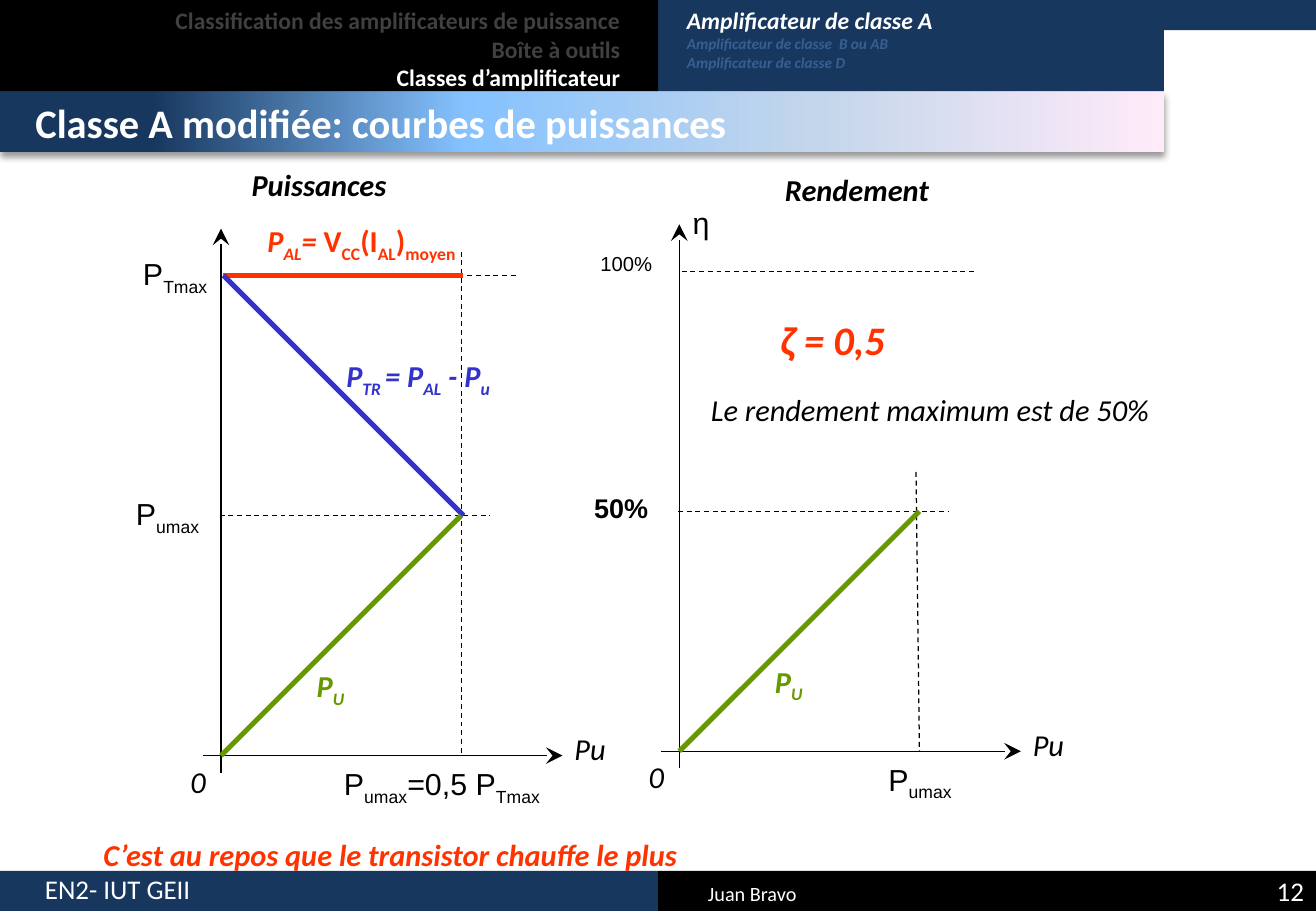
from lxml.etree import SubElement
from pptx import Presentation
from pptx.dml.color import RGBColor
from pptx.enum.dml import MSO_LINE
from pptx.enum.shapes import MSO_CONNECTOR, MSO_SHAPE
from pptx.enum.text import MSO_ANCHOR, PP_ALIGN
from pptx.oxml.ns import qn
from pptx.util import Cm, Pt

WIDTH, HEIGHT = 27.51, 19.05
HALF = 13.76  # where the black and navy bands meet
BAND = 24.33  # right end of the header bands
LEVEL = 5.02  # half of full scale on both plots

COLORS = {
    "navy": "17375E", "black": "000000", "white": "FFFFFF", "faded": "404040",
    "blue": "376092", "sky": "85C2FF", "mist": "C4D6EB", "pink": "FFEBFA",
    "red": "FF3300", "green": "669900", "violet": "3333CC",
}
ITALIC = {"name": "Calibri", "size": Pt(18), "italic": True}
BOLD = {**ITALIC, "bold": True}
ARIAL = {"name": "Arial", "size": Pt(18)}
FOOTER = {"name": "Calibri", "size": Pt(16)}
HEADER = {"name": "Calibri", "size": Pt(14), "bold": True}


def color(name):
    return RGBColor.from_string(COLORS[name])


def write(paragraph, text, tint, style, upright_from=99):
    """Add text in which every second piece between bars is a subscript."""
    for index, piece in enumerate(text.split("|")):
        if not piece:
            continue
        run = paragraph.add_run()
        run.text = piece
        for key, value in style.items():
            setattr(run.font, key, value)
        run.font.color.rgb = color(tint)
        if index >= upright_from:
            run.font.italic = False
        if index % 2:
            run._r.get_or_add_rPr().set("baseline", "-25000")


def set_frame(frame, margins, anchor=MSO_ANCHOR.TOP):
    sides = ("margin_left", "margin_top", "margin_right", "margin_bottom")
    for side, margin in zip(sides, margins):
        setattr(frame, side, Cm(margin))
    frame.word_wrap = True
    frame.vertical_anchor = anchor


def add_label(slide, x, y, width, text, tint, style, upright_from=99):
    frame = slide.shapes.add_textbox(Cm(x), Cm(y), Cm(width), Cm(0.76)).text_frame
    set_frame(frame, (0, 0, 0, 0))
    write(frame.paragraphs[0], text, tint, style, upright_from)


def add_band(slide, x, y, width, height, tint):
    band = slide.shapes.add_shape(
        MSO_SHAPE.RECTANGLE, Cm(x), Cm(y), Cm(width), Cm(height))
    band.shadow.inherit = False
    band.line.fill.background()
    band.fill.solid()
    band.fill.fore_color.rgb = color(tint)
    return band


def add_line(slide, start, end, tint="black", width=0.75, dash=False, arrow=False):
    line = slide.shapes.add_connector(
        MSO_CONNECTOR.STRAIGHT, *(Cm(value) for value in (*start, *end)))
    line.line.color.rgb = color(tint)
    line.line.width = Pt(width)
    properties = line._element.spPr
    if dash:
        line.line.dash_style = MSO_LINE.DASH
    if arrow:
        SubElement(properties.find(qn("a:ln")), qn("a:tailEnd"),
                   type="stealth", w="lg", len="lg")
    SubElement(properties, qn("a:effectLst"))


def add_footer(slide, top, height):
    add_band(slide, WIDTH / 2, top, WIDTH / 2, height, "black")
    add_band(slide, 0, top, WIDTH / 2, height, "navy")
    entries = [
        (0.69, -0.1, 6.65, "EN2- IUT GEII", 16, PP_ALIGN.LEFT),
        (14.55, 0.08, 5.28, "Juan Bravo", 12, PP_ALIGN.LEFT),
        (25.91, 0, 1.6, "12", 16, PP_ALIGN.RIGHT),
    ]
    for x, dy, width, text, size, align in entries:
        frame = slide.shapes.add_textbox(
            Cm(x), Cm(top + dy), Cm(width), Cm(height)).text_frame
        anchor = MSO_ANCHOR.MIDDLE if align == PP_ALIGN.RIGHT else MSO_ANCHOR.TOP
        set_frame(frame, (0.25, 0.13, 0.25, 0.13), anchor)
        frame.paragraphs[0].alignment = align
        write(frame.paragraphs[0], text, "white", {**FOOTER, "size": Pt(size)})


def add_outline(band, margins, align, entries):
    """Write one paragraph per entry of text, tint and style."""
    frame = band.text_frame
    set_frame(frame, margins)
    for index, entry in enumerate(entries):
        paragraph = frame.add_paragraph() if index else frame.paragraphs[0]
        paragraph.alignment = align
        write(paragraph, *entry)


def add_header(slide, height, title_height):
    add_band(slide, 23.93, 0, WIDTH - 23.93, 0.63, "navy")

    # Title bar: gradient and soft shadow
    title = add_band(slide, 0, height, BAND, title_height, "navy")
    title.fill.gradient()
    title.fill.gradient_angle = 0
    properties = title._element.spPr
    stops = properties.find(".//" + qn("a:gsLst"))
    stops.clear()
    for position, tint in ((13, "navy"), (40, "sky"), (70, "mist"), (100, "pink")):
        stop = SubElement(stops, qn("a:gs"), pos=str(position * 1000))
        SubElement(stop, qn("a:srgbClr"), val=COLORS[tint])
    shadow = SubElement(properties.find(qn("a:effectLst")), qn("a:outerShdw"),
                        blurRad=str(Pt(4)), dist=str(Pt(3)), dir="5400000",
                        rotWithShape="0")
    shade = SubElement(shadow, qn("a:srgbClr"), val=COLORS["black"])
    SubElement(shade, qn("a:alpha"), val="40000")
    add_outline(title, (0.74, 0.13, 0.25, 0.13), PP_ALIGN.LEFT, [
        ("Classe A modifiée: courbes de puissances", "white",
         {**HEADER, "size": Pt(24)})])

    # Subsections
    topic = {**HEADER, "italic": True}
    minor = {**topic, "size": Pt(9)}
    subsections = add_band(slide, HALF, 0, BAND - HALF, height, "navy")
    add_outline(subsections, (0.6, 0.13, 0.25, 0.13), PP_ALIGN.LEFT, [
        ("Amplificateur de classe A", "white", topic),
        ("Amplificateur de classe  B ou AB", "blue", minor),
        ("Amplificateur de classe D", "blue", minor)])

    # Sections
    sections = add_band(slide, 0, 0, HALF, height, "black")
    add_outline(sections, (0.25, 0.13, 0.79, 0.13), PP_ALIGN.RIGHT, [
        ("Classification des amplificateurs de puissance", "faded", HEADER),
        ("Boîte à outils", "faded", HEADER),
        ("Classes d’amplificateur", "white", HEADER)])


def add_plot(slide, x, y, guide, curves, labels):
    """Draw a plot whose axes cross at x, y; parts are offsets from there."""
    dashed = {"dash": True}
    axis = {"arrow": True}
    lines = [
        ((-0.38, 0), (7.14, 0), axis),
        ((0, 0.36), (0, -11.02), axis),
        ((-0.03, -LEVEL), (5.62, -LEVEL), dashed),
        ((0.05, -2 * LEVEL), (6.23, -2 * LEVEL), dashed),
        (*guide, dashed),
        *curves,
        ((0, 0), (LEVEL, -LEVEL), {"tint": "green", "width": 3}),
    ]
    for (x1, y1), (x2, y2), options in lines:
        add_line(slide, (x + x1, y + y1), (x + x2, y + y2), **options)
    shared = [
        (7.39, -0.53, 1.63, "Pu", "black", ITALIC),
        (-0.64, 0.15, 0.61, "0", "black", ITALIC),
        (2, -1.85, 1.63, "P|U", "green", BOLD),
    ]
    for dx, dy, *rest in shared + labels:
        add_label(slide, x + dx, y + dy, *rest)


def main():
    presentation = Presentation()
    presentation.slide_width, presentation.slide_height = Cm(WIDTH), Cm(HEIGHT)
    slide = presentation.slides.add_slide(presentation.slide_layouts[6])

    add_footer(slide, 18.21, 0.84)
    add_header(slide, 1.91, 1.27)

    # Power curves
    add_plot(
        slide, 4.62, 15.8, ((LEVEL, -10.54), (LEVEL, 0)),
        [((0.05, -2 * LEVEL), (5.05, -2 * LEVEL), {"tint": "red", "width": 3}),
         ((0.05, -2 * LEVEL), (5.07, -LEVEL), {"tint": "violet", "width": 3})],
        [(0.64, -12.32, 3.84, "Puissances", "black", BOLD),
         (0.97, -11.15, 6.05, "P|AL|= ||V|CC|(I|AL|)|moyen", "red", BOLD, 4),
         (-1.63, -10.46, 1.63, "P|Tmax", "black", ARIAL),
         (-1.78, -5.44, 1.57, "P|umax", "black", ARIAL),
         (2.57, 0.2, 5.08, "P|umax|=0,5 P|Tmax", "black", ARIAL),
         (2.62, -8.33, 4.85, "P|TR |= P|AL| - P|u", "violet", BOLD)])

    # Efficiency curve
    add_plot(
        slide, 14.2, 15.71, ((4.95, -5.84), (LEVEL, 0)), [],
        [(2.21, -12.12, 3.84, "Rendement", "black", BOLD),
         (0.28, -11.43, 1.63, "η", "black", ARIAL),
         (-1.65, -10.46, 1.63, "100%", "black", {**ARIAL, "size": Pt(12)}),
         (-1.78, -5.44, 1.57, "50%", "black",
          {**ARIAL, "size": Pt(16), "bold": True}),
         (4.37, 0.2, 1.57, "P|umax", "black", ARIAL),
         (0.66, -7.52, 9.75, "Le rendement maximum est de 50%", "black", ITALIC),
         (2.11, -9.12, 2.9, "ζ = 0,5", "red", {**BOLD, "size": Pt(24)})])

    # Closing remark
    add_label(slide, 2.16, 17.48, 15.34,
              "C’est au repos que le transistor chauffe le plus", "red", BOLD)
    presentation.save("out.pptx")


if __name__ == "__main__":
    main()
